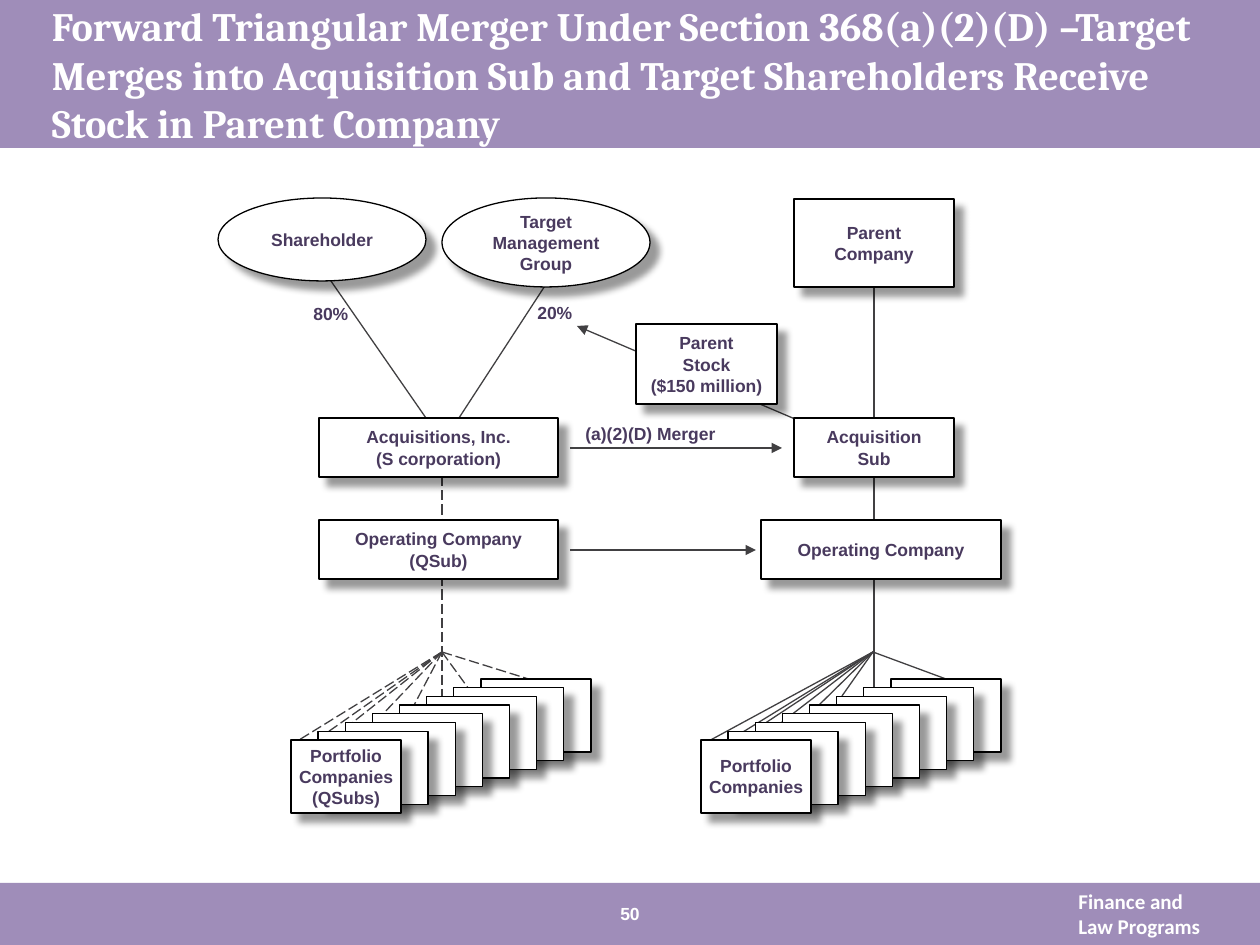
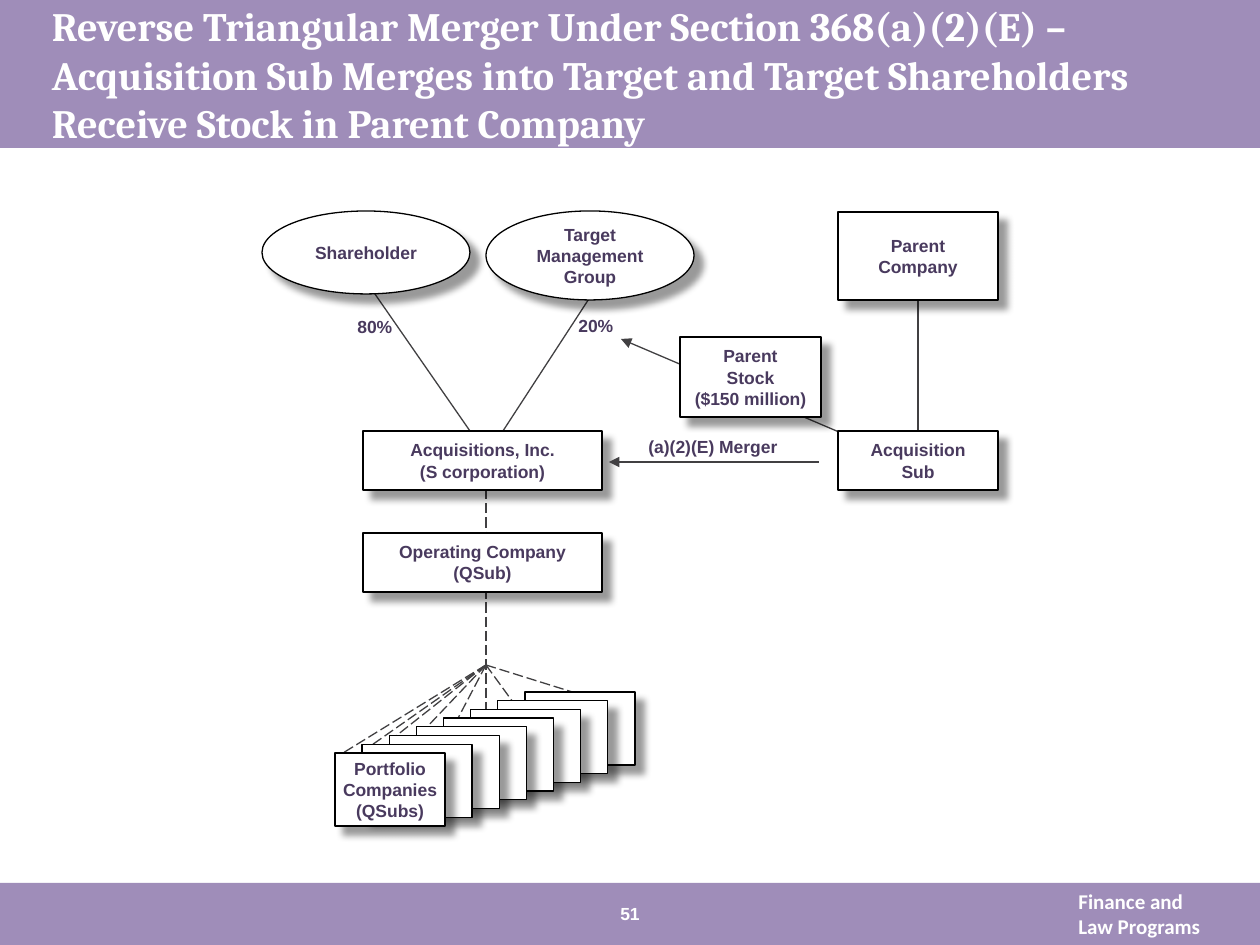
from lxml.etree import SubElement
from pptx import Presentation
from pptx.dml.color import RGBColor
from pptx.enum.dml import MSO_LINE
from pptx.enum.shapes import MSO_CONNECTOR as CONN, MSO_SHAPE as SHAPE
from pptx.enum.text import MSO_ANCHOR as ANCHOR, MSO_AUTO_SIZE as AUTO, PP_ALIGN as ALIGN
from pptx.oxml.ns import qn
from pptx.util import Emu, Pt

PX = 914400 // 126
COLORS = {"band": "9F8DB9", "white": "FFFFFF", "text": "493A5E",
          "border": "000000", "link": "414042"}
CARDS = 8
CARD_SIZE = (110, 73)
STACK_SIZE = (300, 134)
TARGET_FAN = [(8, 61), (37, 53), (61, 44), (92, 35), (120, 32), (183, 17), (247, 3)]
BUYER_FAN = [(6, 63), (29, 61), (60, 47), (76, 47), (112, 32), (141, 17), (253, 3)]


def color(name):
    return RGBColor.from_string(COLORS[name])


def place(o, box):
    """EMU lengths of a px box measured from origin o."""
    x, y, w, h = box
    return [Emu(round(v * PX)) for v in (o[0] + x, o[1] + y, w, h)]


def write(tf, text, size=10, font="Arial", ink="text", align=ALIGN.LEFT):
    tf.word_wrap = True
    tf.text = text
    for p in tf.paragraphs:
        p.alignment = align
        p.font.size = Pt(size)
        p.font.name = font
        p.font.bold = True
        p.font.color.rgb = color(ink)


def set_insets(tf, px):
    tf.margin_left = tf.margin_right = tf.margin_top = tf.margin_bottom = Emu(px * PX)


def add_label(s, o, box, text, **style):
    tb = s.shapes.add_textbox(*place(o, box))
    write(tb.text_frame, text, **style)
    return tb


def add_node(s, o, box, text="", shape=SHAPE.RECTANGLE):
    """White outlined shape with a soft shadow and centred text."""
    sp = s.shapes.add_shape(shape, *place(o, box))
    sp.fill.solid()
    sp.fill.fore_color.rgb = color("white")
    sp.line.color.rgb = color("border")
    sp.line.width = Pt(0.75)
    sp.shadow.inherit = False
    effects = sp.element.spPr.find(qn("a:effectLst"))
    shadow = SubElement(effects, qn("a:outerShdw"), blurRad=str(Pt(4)), dist=str(Pt(7)),
                        dir="2700000", algn="tl", rotWithShape="0")
    tint = SubElement(shadow, qn("a:srgbClr"), val=COLORS["border"])
    SubElement(tint, qn("a:alpha"), val="40000")
    if text:
        tf = sp.text_frame
        set_insets(tf, 6)
        tf.vertical_anchor = ANCHOR.MIDDLE
        write(tf, text, align=ALIGN.CENTER)


def add_link(s, o, start, end, dashed=False, arrow=False):
    points = [Emu((base + v) * PX) for pt in (start, end) for base, v in zip(o, pt)]
    c = s.shapes.add_connector(CONN.STRAIGHT, *points)
    c.line.color.rgb = color("link")
    c.line.width = Pt(0.75)
    if dashed:
        c.line.dash_style = MSO_LINE.LONG_DASH
    if arrow:
        SubElement(c.element.spPr.find(qn("a:ln")), qn("a:tailEnd"), type="triangle")
    SubElement(c.element.spPr, qn("a:effectLst"))


def add_portfolio(s, o, apex, fan, text, dashed=False):
    """Fan of links from the apex to a stack of cards, back card first."""
    for end in fan:
        add_link(s, o, apex, end, dashed)
    (w, h), (cw, ch) = STACK_SIZE, CARD_SIZE
    for i in range(CARDS):
        done = i / (CARDS - 1)
        box = ((w - cw) * (1 - done), (h - ch) * done, cw, ch)
        add_node(s, o, box, text if i == CARDS - 1 else "")


def add_target_side(s, o, management_share_x):
    add_link(s, o, (224, 278), (224, 499), dashed=True)
    add_link(s, o, (336, 74), (241, 220))
    add_link(s, o, (97, 60), (208, 220))
    add_node(s, o, (0, 0, 208, 83), "Shareholder", SHAPE.OVAL)
    add_node(s, o, (224, 0, 208, 89), "Target Management Group", SHAPE.OVAL)
    add_node(s, o, (101, 220, 239, 59), "Acquisitions, Inc.\n(S corporation)")
    add_node(s, o, (101, 322, 239, 59), "Operating Company\n(QSub)")
    add_label(s, o, (83, 99, 64, 29), "80%")
    add_label(s, o, (management_share_x, 98, 64, 29), "20%")
    add_portfolio(s, (o[0] + 73, o[1] + 481), (151, -27), TARGET_FAN,
                  "Portfolio\nCompanies\n(QSubs)", dashed=True)


def add_buyer_side(s, o, operating=False):
    """Parent above its acquisition sub, with operating companies if asked."""
    add_link(s, o, (80, 88), (80, 488 if operating else 219))
    add_node(s, o, (0, 0, 160, 88), "Parent\nCompany")
    add_node(s, o, (0, 219, 160, 59), "Acquisition\nSub")
    if operating:
        add_node(s, o, (-33, 321, 240, 59), "Operating Company")
        add_portfolio(s, (o[0] - 93, o[1] + 480), (172, -27), BUYER_FAN,
                      "Portfolio\nCompanies")


def add_stock_payment(s, o):
    add_link(s, o, (180, 104), (-59, 2), arrow=True)
    add_node(s, o, (0, 0, 141, 80), "Parent\nStock\n($150 million)")


def add_diagram(s, o, management_share_x, operating=False):
    x, y = o
    add_stock_payment(s, (x + 418, y + 126))
    add_target_side(s, o, management_share_x)
    add_buyer_side(s, (x + 576, y + 1), operating)


def add_shared_bands(s, layout):
    """Draw the bands and programme name, then hand them to the layout."""
    bands = []
    for box in ((0, 0, 1260, 148), (0, 883, 1260, 62)):
        band = s.shapes.add_shape(SHAPE.RECTANGLE, *place((0, 0), box))
        band.fill.solid()
        band.fill.fore_color.rgb = color("band")
        band.line.fill.background()
        band.shadow.inherit = False
        bands.append(band)
    name = add_label(s, (0, 0), (1066, 882, 184, 63), "Finance and\nLaw Programs",
                     size=12, font="Calibri", ink="white")
    for sp in (*bands, name):
        layout.shapes.element.append(sp.element)


def add_titled_slide(prs, layout, title, number):
    s = prs.slides.add_slide(layout)
    head = s.shapes.title
    head.left, head.top, head.width, head.height = place((0, 0), (52, 0, 1156, 148))
    tf = head.text_frame
    set_insets(tf, 0)
    tf.vertical_anchor = ANCHOR.MIDDLE
    tf.auto_size = AUTO.NONE
    write(tf, title, size=23, font="Cambria", ink="white")
    page = add_label(s, (0, 0), (567, 903, 126, 22), str(number),
                     ink="white", align=ALIGN.CENTER)
    page.text_frame.vertical_anchor = ANCHOR.MIDDLE
    return s


def add_forward_merger(prs, layout):
    s = add_titled_slide(
        prs, layout, "Forward Triangular Merger Under Section 368(a)(2)(D) –Target Merges "
        "into Acquisition Sub and Target Shareholders Receive Stock in Parent Company", 50)
    o = (218, 198)
    add_diagram(s, o, 307, operating=True)
    add_link(s, o, (352, 250), (564, 250), arrow=True)
    add_label(s, o, (355, 219, 185, 34), "(a)(2)(D) Merger")
    add_link(s, o, (352, 352), (538, 352), arrow=True)
    return s


def add_reverse_merger(prs, layout):
    s = add_titled_slide(
        prs, layout, "Reverse Triangular Merger Under Section 368(a)(2)(E) –Acquisition Sub "
        "Merges into Target and Target Shareholders Receive Stock in Parent Company", 51)
    o = (262, 211)
    add_diagram(s, o, 304)
    add_link(s, o, (557, 251), (347, 251), arrow=True)
    add_label(s, o, (374, 219, 155, 29), "(a)(2)(E) Merger")


def main():
    prs = Presentation()
    prs.slide_width, prs.slide_height = Emu(1260 * PX), Emu(945 * PX)
    layout = prs.slide_layouts[5]
    first = add_forward_merger(prs, layout)
    add_shared_bands(first, layout)
    add_reverse_merger(prs, layout)
    prs.save("out.pptx")


if __name__ == "__main__":
    main()
